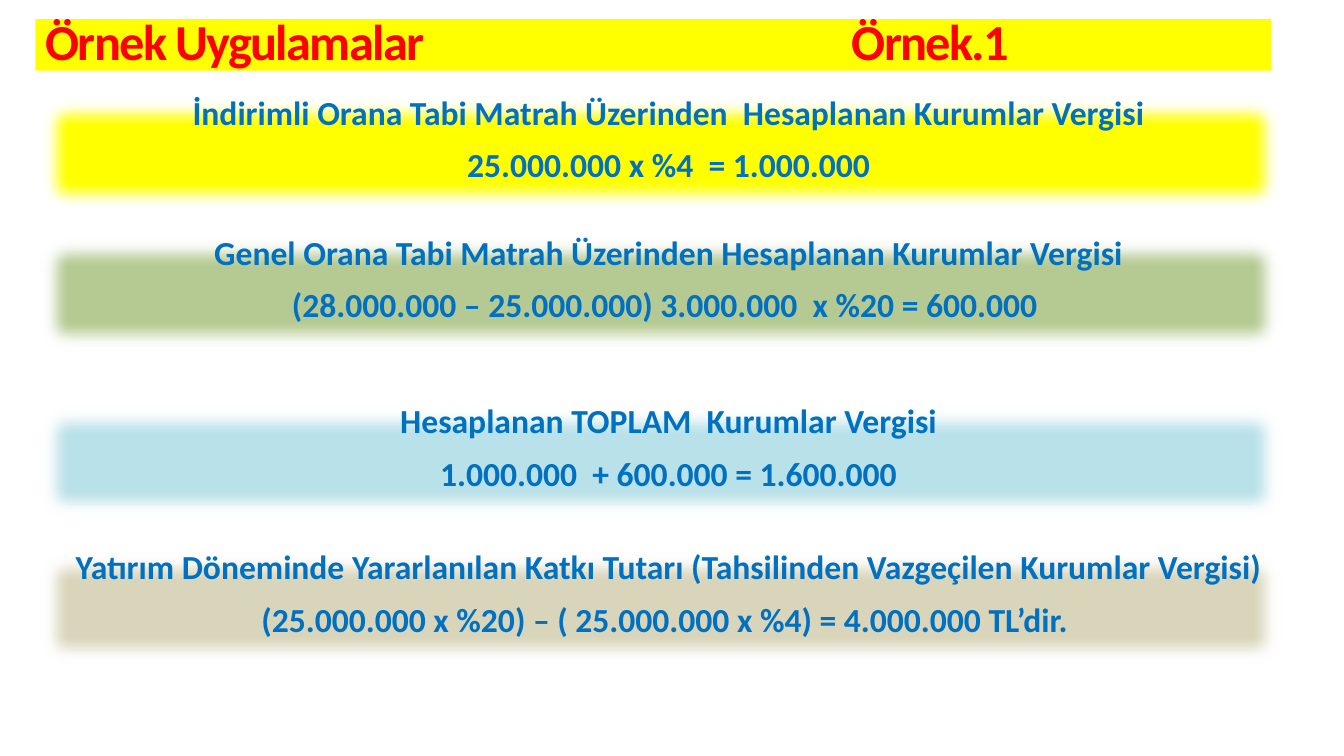
from lxml.etree import SubElement
from pptx import Presentation
from pptx.dml.color import RGBColor
from pptx.enum.shapes import MSO_SHAPE
from pptx.enum.text import MSO_ANCHOR, MSO_AUTO_SIZE, PP_ALIGN
from pptx.oxml.ns import qn
from pptx.util import Cm, Pt

TITLE_ONLY = 5
LEFT = 0.89
BANDS = [
    (2.34, "FFFF00",
     "İndirimli Orana Tabi Matrah Üzerinden  Hesaplanan Kurumlar Vergisi",
     "25.000.000 x %4  = 1.000.000"),
    (5.87, "B5CA92",
     "Genel Orana Tabi Matrah Üzerinden Hesaplanan Kurumlar Vergisi",
     "(28.000.000 – 25.000.000) 3.000.000  x %20 = 600.000 "),
    (10.11, "B9E1E9",
     "Hesaplanan TOPLAM  Kurumlar Vergisi",
     "1.000.000  + 600.000 = 1.600.000"),
    (13.79, "D9D5BA",
     "Yatırım Döneminde Yararlanılan Katkı Tutarı (Tahsilinden Vazgeçilen Kurumlar Vergisi)",
     "(25.000.000 x %20) – ( 25.000.000 x %4) = 4.000.000 TL’dir. "),
]


def color(value):
    return RGBColor.from_string(value)


class TaxSlide:
    font_name = "Calibri"
    title_color = "FF0000"
    text_color = "0070C0"
    line_spacing = 0.85
    soft_edge = Pt(12.5)
    indent = Cm(0.25)

    def __init__(self, presentation):
        self.slide = presentation.slides.add_slide(presentation.slide_layouts[TITLE_ONLY])

    def fill(self, shape, value):
        shape.fill.solid()
        shape.fill.fore_color.rgb = color(value)

    def format_paragraph(self, paragraph, alignment, size, value):
        paragraph.alignment = alignment
        paragraph.line_spacing = self.line_spacing
        for run in paragraph.runs:
            run.font.name = self.font_name
            run.font.size = Pt(size)
            run.font.bold = True
            run.font.color.rgb = color(value)

    def title(self, heading, example, tab_position):
        shape = self.slide.shapes.title
        shape.left, shape.top = Cm(LEFT), Cm(0.48)
        shape.width, shape.height = Cm(31.14), Cm(1.3)
        self.fill(shape, "FFFF00")
        frame = shape.text_frame
        frame.text = f"{heading}\t{example}"
        frame.auto_size = MSO_AUTO_SIZE.NONE
        frame.vertical_anchor = MSO_ANCHOR.MIDDLE
        paragraph = frame.paragraphs[0]
        self.format_paragraph(paragraph, PP_ALIGN.LEFT, 36, self.title_color)
        for run in paragraph.runs:
            run.font._element.set("spc", "-120")
        tabs = SubElement(paragraph._p.get_or_add_pPr(), qn("a:tabLst"))
        SubElement(tabs, qn("a:tab"), pos=str(tab_position), algn="l")

    def band(self, top, value, lines):
        shape = self.slide.shapes.add_shape(
            MSO_SHAPE.RECTANGLE, Cm(LEFT), Cm(top), Cm(31.5), Cm(3.07))
        self.fill(shape, value)
        shape.line.fill.background()
        shape.shadow.inherit = False
        effects = shape._element.spPr.find(qn("a:effectLst"))
        SubElement(effects, qn("a:softEdge"), rad=str(self.soft_edge))
        frame = shape.text_frame
        frame.text = "\n".join(lines)
        frame.word_wrap = True
        frame.vertical_anchor = MSO_ANCHOR.TOP
        for paragraph in frame.paragraphs:
            self.format_paragraph(paragraph, PP_ALIGN.CENTER, 24, self.text_color)
            paragraph.space_before = Pt(13)
            properties = paragraph._p.get_or_add_pPr()
            properties.set("marL", str(self.indent))
            properties.set("indent", str(-self.indent))
            SubElement(properties, qn("a:buChar"), char=" ")


def main():
    presentation = Presentation()
    presentation.slide_width, presentation.slide_height = Cm(33.87), Cm(19.05)
    tax_slide = TaxSlide(presentation)
    tax_slide.title("Örnek Uygulamalar ", "Örnek.1", Cm(20.32))
    for top, value, *lines in BANDS:
        tax_slide.band(top, value, lines)
    presentation.save("out.pptx")


if __name__ == "__main__":
    main()
